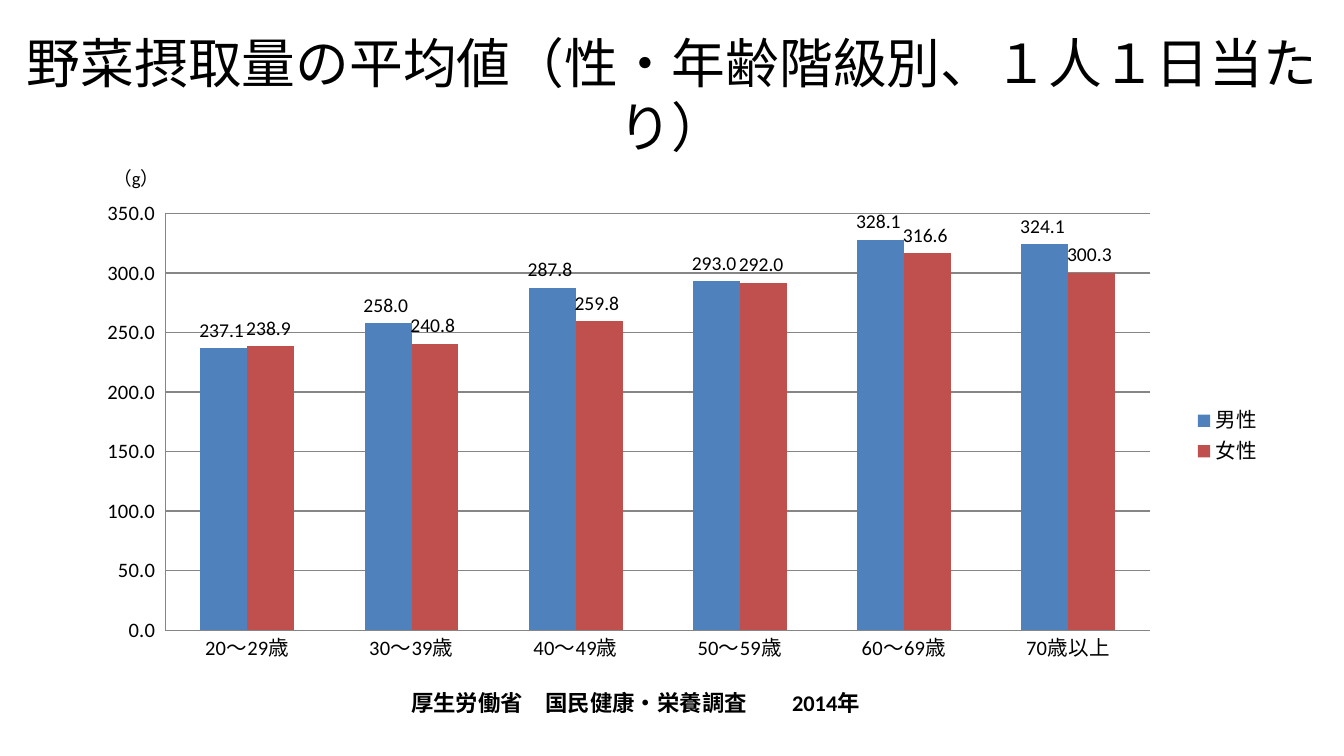
from dataclasses import dataclass

from lxml import etree
from pptx import Presentation
from pptx import util as u
from pptx.chart import data as chart_data
from pptx.dml.color import RGBColor
from pptx.enum import chart as chart_enum
from pptx.enum import text
from pptx.oxml.ns import qn


@dataclass(frozen=True)
class Theme:
    font: str = "Calibri"
    ink: str = "000000"
    grid: str = "868686"
    title_size: float = 28.8
    source_size: float = 12
    axis_size: float = 11
    label_size: float = 10.5
    unit_size: float = 10


@dataclass(frozen=True)
class Series:
    name: str
    values: tuple[float, ...]
    color: str


THEME = Theme()
SLIDE_WIDTH = u.Inches(10)
SLIDE_HEIGHT = SLIDE_WIDTH * 9 // 16
CHART_WIDTH = u.Inches(8.98)
CHART_HEIGHT = u.Inches(4.49)
NUMBER_FORMAT = r"0.0_);[Red]\(0.0\)"
AGE_GROUPS = ("20～29歳", "30～39歳", "40～49歳", "50～59歳", "60～69歳", "70歳以上")
INTAKE = (
    Series("男性", (237.1, 258.0, 287.8, 293.0, 328.1, 324.1), "4F81BD"),
    Series("女性", (238.9, 240.8, 259.8, 292.0, 316.6, 300.3), "C0504D"),
)


def style_font(font, size: float, bold: bool = False) -> None:
    """Set the font for Latin and East Asian text alike."""
    font.name = THEME.font
    font.size = u.Pt(size)
    font.bold = bold
    font.color.rgb = RGBColor.from_string(THEME.ink)
    east_asian = etree.Element(qn("a:ea"), typeface=THEME.font)
    font._element.find(qn("a:latin")).addnext(east_asian)


def write_text(frame, content: str, *, size: float, bold: bool = False,
               align=text.PP_ALIGN.CENTER) -> None:
    paragraph = frame.paragraphs[0]
    paragraph.alignment = align
    run = paragraph.add_run()
    run.text = content
    style_font(run.font, size, bold)


def set_layout(parent, position: int, **values: object) -> None:
    """Place a chart part; lengths become fractions of the chart."""
    for old in parent.findall(qn("c:layout")):
        parent.remove(old)
    whole = {"x": CHART_WIDTH, "w": CHART_WIDTH, "y": CHART_HEIGHT, "h": CHART_HEIGHT}
    layout = etree.Element(qn("c:layout"))
    manual = etree.SubElement(layout, qn("c:manualLayout"))
    for name, value in values.items():
        if name in whole:
            value = value / whole[name]
        etree.SubElement(manual, qn(f"c:{name}")).set("val", str(value))
    parent.insert(position, layout)


def add_axis_title(axis, content: str, *, x: u.Length, y: u.Length,
                   size: float, bold: bool = False) -> None:
    write_text(axis.axis_title.text_frame, content, size=size, bold=bold)
    title = axis.axis_title._element
    body = title.find(".//" + qn("a:bodyPr"))
    body.set("rot", "0")
    body.set("vert", "horz")
    set_layout(title, 1, xMode="edge", yMode="edge", x=x, y=y)


def style_line(line) -> None:
    line.color.rgb = RGBColor.from_string(THEME.grid)
    line.width = u.Pt(0.75)


def style_axis(axis) -> None:
    axis.major_tick_mark = chart_enum.XL_TICK_MARK.NONE
    axis.minor_tick_mark = chart_enum.XL_TICK_MARK.NONE
    style_font(axis.tick_labels.font, THEME.axis_size)
    style_line(axis.format.line)


def style_series(series, color: str) -> None:
    series.format.fill.solid()
    series.format.fill.fore_color.rgb = RGBColor.from_string(color)
    series.invert_if_negative = False
    labels = series.data_labels
    labels.show_value = True
    labels.position = chart_enum.XL_LABEL_POSITION.OUTSIDE_END
    labels.number_format = NUMBER_FORMAT
    labels.number_format_is_linked = False
    style_font(labels.font, THEME.label_size)


def add_title(slide) -> None:
    box = slide.shapes.add_textbox(u.Inches(0), u.Inches(0.23), SLIDE_WIDTH, u.Inches(0.94))
    frame = box.text_frame
    frame.word_wrap = True
    frame.vertical_anchor = text.MSO_ANCHOR.MIDDLE
    write_text(frame, "野菜摂取量の平均値（性・年齢階級別、１人１日当たり）", size=THEME.title_size)


def add_intake_chart(slide) -> None:
    data = chart_data.CategoryChartData(number_format=NUMBER_FORMAT)
    data.categories = AGE_GROUPS
    for item in INTAKE:
        data.add_series(item.name, item.values)
    chart = slide.shapes.add_chart(
        chart_enum.XL_CHART_TYPE.COLUMN_CLUSTERED,
        u.Inches(0.51), u.Inches(1), CHART_WIDTH, CHART_HEIGHT, data,
    ).chart
    style_font(chart.font, THEME.unit_size)
    chart.has_title = False

    plot = chart.plots[0]
    plot.gap_width = 150
    plot.overlap = 0
    plot.vary_by_categories = False
    for series, item in zip(plot.series, INTAKE):
        style_series(series, item.color)
    plot_area = chart._chartSpace.find(".//" + qn("c:plotArea"))
    set_layout(plot_area, 0, layoutTarget="inner", xMode="edge", yMode="edge",
               x=u.Inches(0.72), y=u.Inches(0.59), w=u.Inches(7.33), h=u.Inches(3.1))

    ages, grams = chart.category_axis, chart.value_axis
    style_axis(ages)
    style_axis(grams)
    grams.minimum_scale, grams.maximum_scale, grams.major_unit = 0, 350, 50
    grams.tick_labels.number_format = NUMBER_FORMAT
    grams.tick_labels.number_format_is_linked = False
    grams.has_major_gridlines = True
    style_line(grams.major_gridlines.format.line)
    add_axis_title(ages, "厚生労働省　国民健康・栄養調査　　2014年",
                   x=u.Inches(2.52), y=u.Inches(4.09), size=THEME.source_size, bold=True)
    add_axis_title(grams, "（g）", x=u.Inches(0.31), y=u.Inches(0.21), size=THEME.unit_size)

    chart.has_legend = True
    chart.legend.position = chart_enum.XL_LEGEND_POSITION.RIGHT
    chart.legend.include_in_layout = False
    style_font(chart.legend.font, THEME.axis_size)


def main() -> None:
    presentation = Presentation()
    presentation.slide_width = SLIDE_WIDTH
    presentation.slide_height = SLIDE_HEIGHT
    slide = presentation.slides.add_slide(presentation.slide_layouts[6])
    add_intake_chart(slide)
    add_title(slide)
    presentation.save("out.pptx")


if __name__ == "__main__":
    main()
